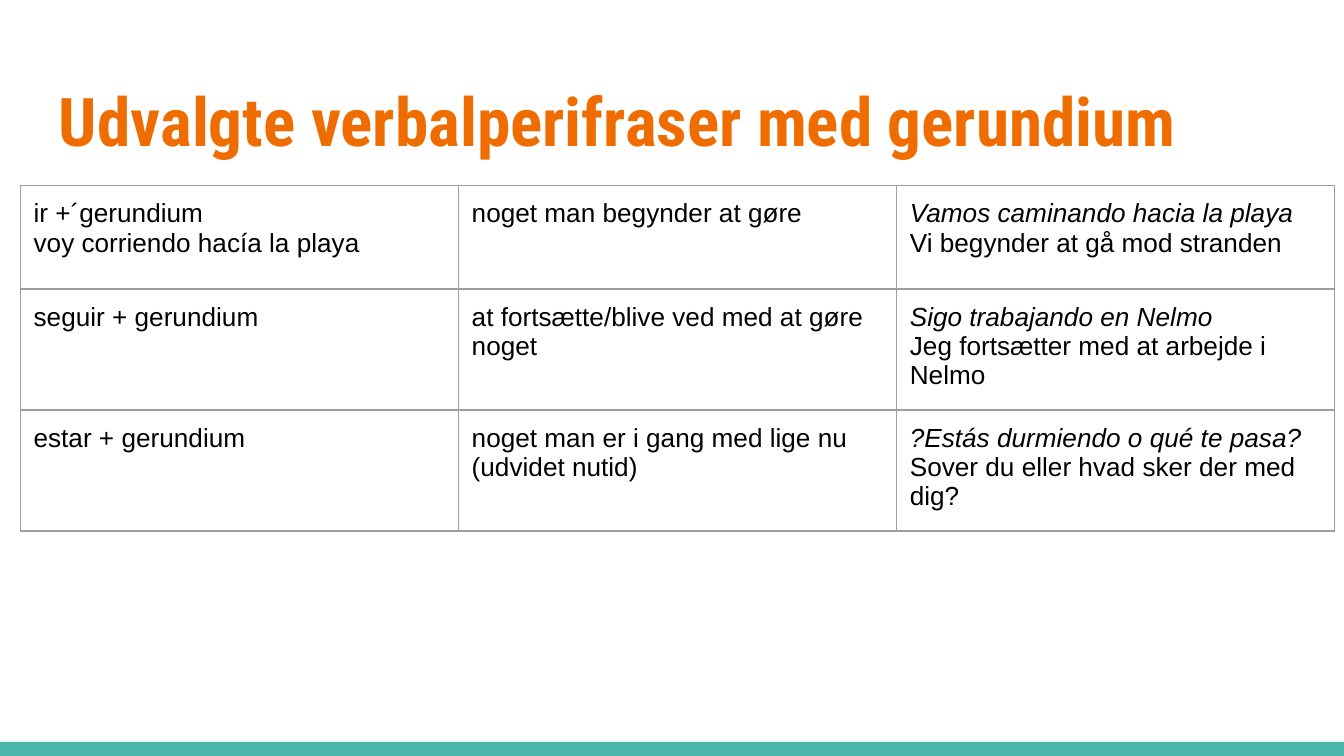
from typing import NamedTuple

from lxml import etree
from pptx import Presentation
from pptx.dml.color import RGBColor
from pptx.enum import shapes, text
from pptx.oxml import ns
from pptx.util import Inches, Pt

ORANGE = RGBColor(0xEF, 0x6C, 0x00)
TEAL = RGBColor(0x4D, 0xB6, 0xAC)
GREY = RGBColor(0x9E, 0x9E, 0x9E)
BLACK = RGBColor(0, 0, 0)

TITLE_FONT = {"name": "Roboto Condensed", "size": Pt(36), "bold": True}
CELL_FONT = {"name": "Arial", "size": Pt(14), "bold": False}
MARGIN = Inches(0.1)
COL_WIDTH, ROW_HEIGHT = 3.26, 0.77


class Periphrasis(NamedTuple):
    forms: tuple[str, ...]
    meaning: str
    spanish: str
    danish: str


PERIPHRASES = [
    Periphrasis(("ir +´gerundium", "voy corriendo hacía la playa"),
                "noget man begynder at gøre",
                "Vamos caminando hacia la playa", "Vi begynder at gå mod stranden"),
    Periphrasis(("seguir + gerundium",),
                "at fortsætte/blive ved med at gøre noget",
                "Sigo trabajando en Nelmo", "Jeg fortsætter med at arbejde i Nelmo"),
    Periphrasis(("estar + gerundium",),
                "noget man er i gang med lige nu (udvidet nutid)",
                "?Estás durmiendo o qué te pasa?", "Sover du eller hvad sker der med dig?"),
]


def add_run(p, words: str, fmt: dict, color: RGBColor) -> None:
    p.line_spacing = 1.0
    r = p.add_run()
    r.text = words
    for name, value in fmt.items():
        setattr(r.font, name, value)
    r.font.color.rgb = color
    # The paragraph mark takes the text size, so that it does not stretch the row
    etree.SubElement(p._p, ns.qn("a:endParaRPr"), sz=str(int(fmt["size"].pt * 100)))


def set_margins(target) -> None:
    for side in ("left", "right", "top", "bottom"):
        setattr(target, f"margin_{side}", MARGIN)


def add_borders(cell) -> None:
    props = cell._tc.get_or_add_tcPr()
    for side in "LRTB":
        line = etree.SubElement(props, ns.qn(f"a:ln{side}"), w=str(Pt(0.75)))
        fill = etree.SubElement(line, ns.qn("a:solidFill"))
        etree.SubElement(fill, ns.qn("a:srgbClr"), val=str(GREY))


def fill_cell(cell, lines: tuple[str, ...], italic_first: bool = False) -> None:
    set_margins(cell)
    add_borders(cell)
    cell.fill.background()
    tf = cell.text_frame
    for i, line in enumerate(lines):
        p = tf.add_paragraph() if i else tf.paragraphs[0]
        add_run(p, line, CELL_FONT | {"italic": italic_first and i == 0}, BLACK)


def add_footer_bar(s) -> None:
    bar = s.shapes.add_shape(shapes.MSO_SHAPE.RECTANGLE, Inches(0), Inches(5.52),
                             Inches(10), Inches(0.11))
    bar.shadow.inherit = False
    bar.fill.solid()
    bar.fill.fore_color.rgb = TEAL
    bar.line.fill.background()


def add_title(s, words: str) -> None:
    sp = s.shapes.add_textbox(Inches(0.34), Inches(0.49), Inches(9.32), Inches(0.77))
    tf = sp.text_frame
    tf.word_wrap = True
    tf.vertical_anchor = text.MSO_ANCHOR.TOP
    set_margins(tf)
    add_run(tf.paragraphs[0], words, TITLE_FONT, ORANGE)


def add_periphrasis_table(s, rows: list[Periphrasis]) -> None:
    table = s.shapes.add_table(len(rows), 3, Inches(0.15), Inches(1.38),
                               Inches(3 * COL_WIDTH), Inches(len(rows) * ROW_HEIGHT)).table
    table.first_row = table.horz_banding = False
    for i, row in enumerate(rows):
        fill_cell(table.cell(i, 0), row.forms)
        fill_cell(table.cell(i, 1), (row.meaning,))
        fill_cell(table.cell(i, 2), (row.spanish, row.danish), italic_first=True)


def main() -> None:
    prs = Presentation()
    prs.slide_width = Inches(10)
    prs.slide_height = prs.slide_width * 9 // 16
    s = prs.slides.add_slide(prs.slide_layouts[6])

    # Footer, heading and the three periphrases
    add_footer_bar(s)
    add_title(s, "Udvalgte verbalperifraser med gerundium")
    add_periphrasis_table(s, PERIPHRASES)

    prs.save("out.pptx")


if __name__ == "__main__":
    main()
